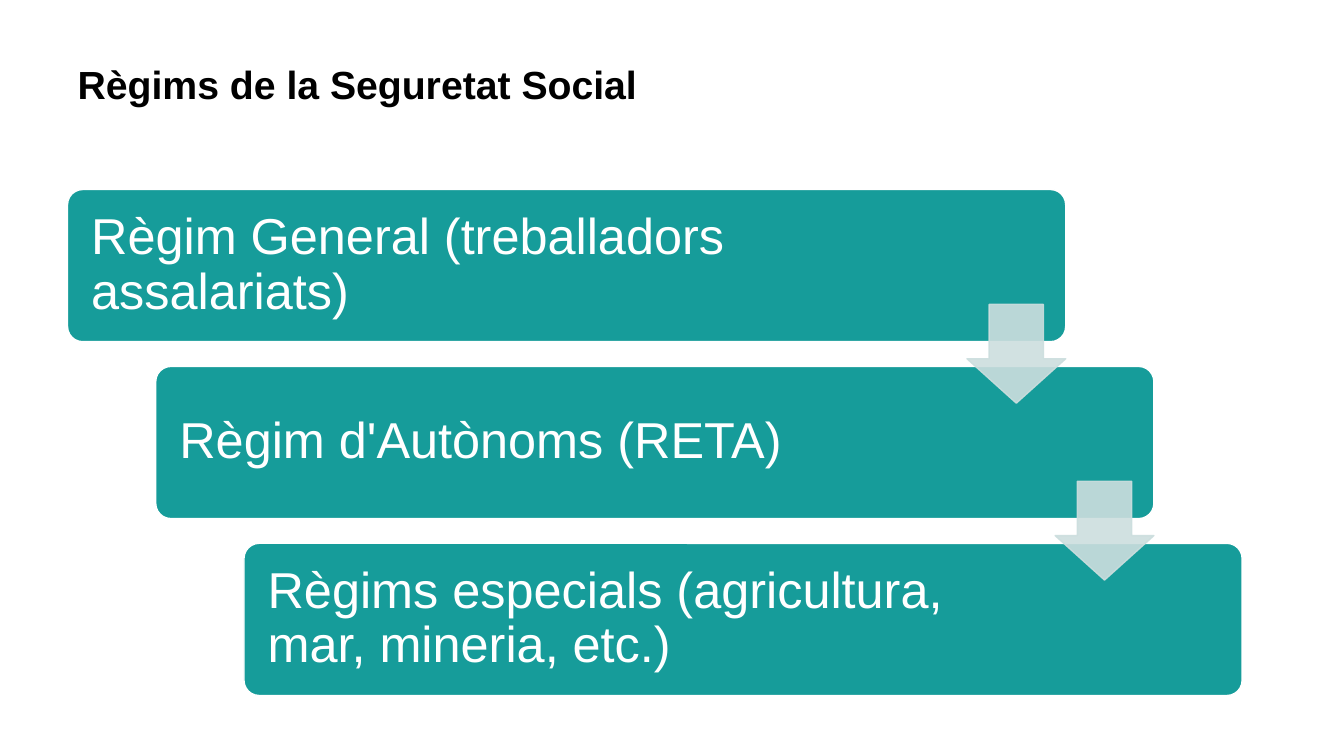
from lxml import etree
from pptx import Presentation
from pptx.dml.color import RGBColor
from pptx.enum import shapes, text
from pptx.oxml import ns
from pptx.util import Inches, Pt

TITLE = "Règims de la Seguretat Social"
STEPS = [
    "Règim General (treballadors assalariats)",
    "Règim d'Autònoms (RETA)",
    "Règims especials (agricultura, mar, mineria, etc.)",
]
COLORS = {"ink": "000000", "paper": "FFFFFF", "teal": "169C9A", "mist": "CCDEDE"}
FONT = "Arial"

WIDE, HIGH = 13.33, 7.5
LEFT, TOP = 0.67, 1.88          # first step
BOX_W, BOX_H = 9.9, 1.51
STEP_X, STEP_Y = 0.875, 1.755   # shift from one step to the next
ARROW = 0.98
ARROW_Y = 1.14                  # arrow top below its step's top
PAD, PAD_END = 0.19, 2.05       # text insets, wide on the arrow side


def rgb(name):
    return RGBColor.from_string(COLORS[name])


def write(frame, words, size, color, bold=False):
    frame.text = words
    frame.word_wrap = True
    frame.auto_size = text.MSO_AUTO_SIZE.NONE
    para = frame.paragraphs[0]
    para.alignment = text.PP_ALIGN.LEFT
    para.line_spacing = 0.9
    font = para.runs[0].font
    font.name, font.size, font.bold = FONT, Pt(size), bold
    font.color.rgb = rgb(color)


def draw(kind, x, y, w, h, fill, line, adjust):
    shape = slide.shapes.add_shape(kind, *map(Inches, (x, y, w, h)))
    shape.shadow.inherit = False
    for i, value in enumerate(adjust):
        shape.adjustments[i] = value
    shape.fill.solid()
    shape.fill.fore_color.rgb = rgb(fill)
    shape.line.color.rgb = rgb(line)
    shape.line.width = Pt(1)
    return shape


def fade(shape, share):
    """Set the opacity of a shape's fill and line."""
    for color in shape.element.spPr.iter(ns.qn("a:srgbClr")):
        etree.SubElement(color, ns.qn("a:alpha")).set("val", str(share * 1000))


deck = Presentation()
deck.slide_width, deck.slide_height = Inches(WIDE), Inches(HIGH)
slide = deck.slides.add_slide(deck.slide_layouts[5])

title = slide.shapes.title
title.left, title.top = Inches(LEFT), Inches(0.6)
title.width, title.height = Inches(11.65), Inches(1.24)
write(title.text_frame, TITLE, 28, "ink", True)
title.text_frame.vertical_anchor = text.MSO_ANCHOR.TOP

for i, words in enumerate(STEPS):
    box = draw(shapes.MSO_SHAPE.ROUNDED_RECTANGLE, LEFT + i * STEP_X,
               TOP + i * STEP_Y, BOX_W, BOX_H, "teal", "paper", [0.1])
    frame = box.text_frame
    write(frame, words, 36, "paper")
    frame.vertical_anchor = text.MSO_ANCHOR.MIDDLE
    frame.margin_left = frame.margin_top = frame.margin_bottom = Inches(PAD)
    frame.margin_right = Inches(PAD_END)

for i in range(len(STEPS) - 1):
    arrow = draw(shapes.MSO_SHAPE.DOWN_ARROW,
                 LEFT + BOX_W - ARROW + i * STEP_X, TOP + ARROW_Y + i * STEP_Y,
                 ARROW, ARROW, "mist", "mist", [0.55, 0.45])
    fade(arrow, 90)

deck.save("out.pptx")
